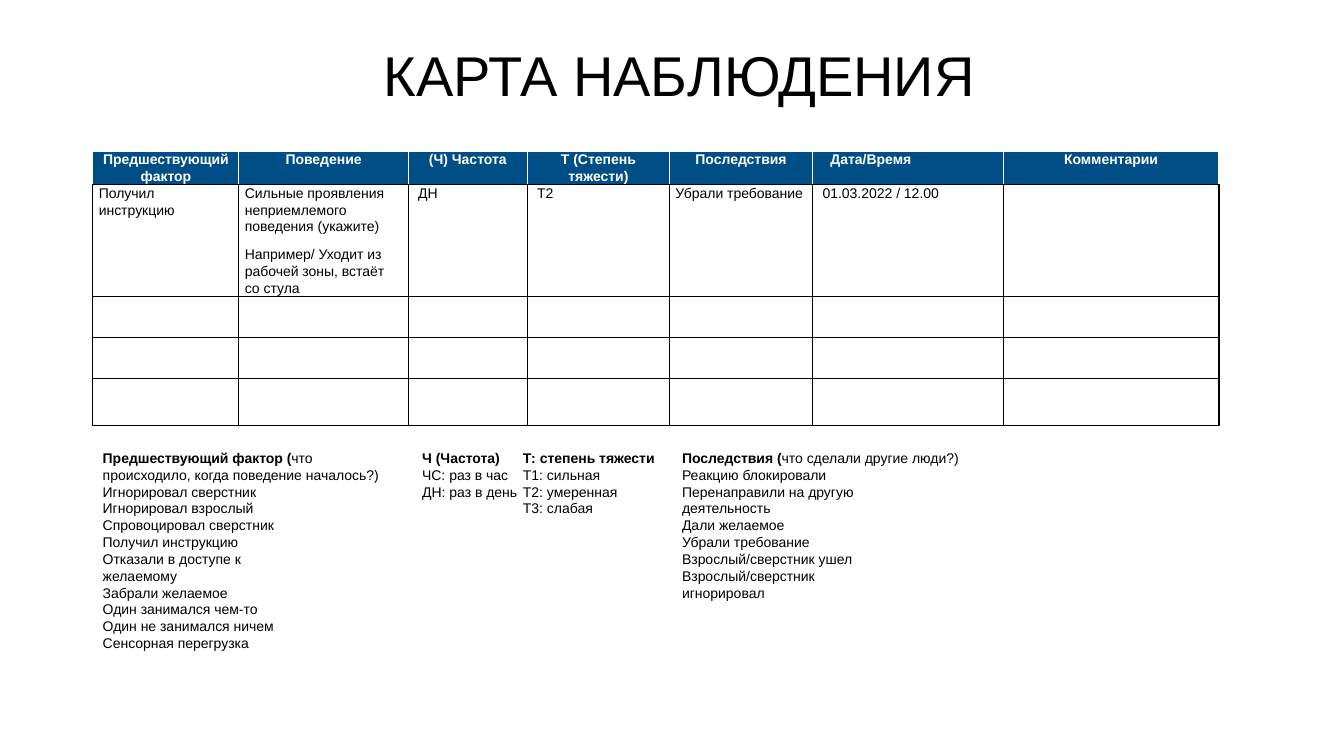
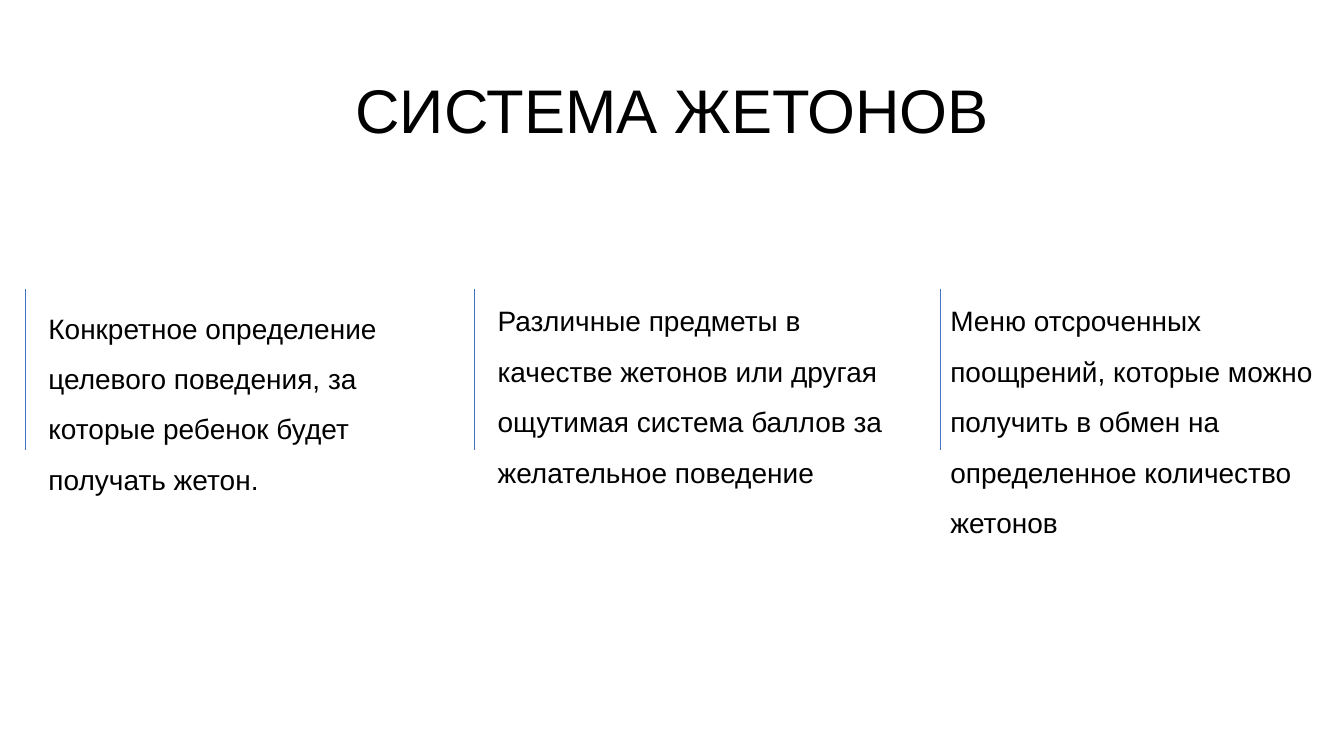
from lxml.etree import SubElement
from pptx import Presentation
from pptx.dml.color import RGBColor
from pptx.enum.shapes import MSO_CONNECTOR
from pptx.enum.text import MSO_ANCHOR, MSO_AUTO_SIZE, PP_ALIGN
from pptx.oxml.ns import qn
from pptx.util import Cm, Pt

BLACK = RGBColor(0x00, 0x00, 0x00)
WHITE = RGBColor(0xFF, 0xFF, 0xFF)
NAVY = RGBColor(0x00, 0x4E, 0x86)
BLUE = RGBColor(0x44, 0x72, 0xC4)
FONT = "Arial"
SLIDE_WIDTH, SLIDE_HEIGHT = Cm(33.87), Cm(19.05)

COLUMN_WIDTHS = [3.68, 4.27, 3, 3.58, 3.61, 4.8, 5.44]
ROW_HEIGHTS = [0.82, 2.72, 1.04, 1.04, 1.17]
CELL_MARGIN = 0.15
HEADERS = [
    "Предшествующий фактор", "Поведение", "(Ч) Частота", "Т (Степень тяжести)",
    "Последствия", "Дата/Время", "Комментарии",
]
EXAMPLE = [
    "Получил инструкцию",
    "Сильные проявления неприемлемого поведения (укажите)\n"
    "Например/ Уходит из рабочей зоны, встаёт со стула",
    "ДН", "T2", "Убрали требование", "01.03.2022 / 12.00", "",
]
DATE_COLUMN = 5
INDENTS = {(0, DATE_COLUMN): 0.3, (1, 2): 0.1, (1, 3): 0.1, (1, DATE_COLUMN): 0.1}

LEGENDS = [
    (2.34, 8.05, 5.82, "Предшествующий фактор (",
     "что происходило, когда поведение началось?)",
     ["Игнорировал сверстник", "Игнорировал взрослый", "Спровоцировал сверстник",
      "Получил инструкцию", "Отказали в доступе к", "желаемому", "Забрали желаемое",
      "Один занимался чем-то", "Один не занимался ничем", "Сенсорная перегрузка"]),
    (10.39, 6.73, 2.39, "Ч (Частота)\tТ: степень тяжести", "",
     ["ЧС: раз в час\tТ1: сильная", "ДН: раз в день\tТ2: умеренная", "\tТ3: слабая"]),
    (16.94, 8.31, 4.52, "Последствия (", "что сделали другие люди?)",
     ["Реакцию блокировали", "Перенаправили на другую", "деятельность",
      "Дали желаемое", "Убрали требование", "Взрослый/сверстник ушел",
      "Взрослый/сверстник", "игнорировал"]),
]

TOKEN_PARTS = [
    (0.64, 0.97, 7.29,
     "Конкретное определение целевого поведения, за которые ребенок будет получать жетон."),
    (11.96, 12.29, 7.11,
     "Различные предметы в качестве жетонов или другая ощутимая система баллов "
     "за желательное поведение"),
    (23.7, 23.7, 7.11,
     "Меню отсроченных поощрений, которые можно получить в обмен на определенное "
     "количество жетонов"),
]


def style_font(font, size, color=BLACK, bold=False):
    font.name = FONT
    font.size = Pt(size)
    font.color.rgb = color
    font.bold = bold


def add_titled_page(deck, text, left, top, size):
    page = deck.slides.add_slide(deck.slide_layouts[5])
    title = page.shapes.title
    title.left, title.top, title.width, title.height = left, top, Cm(29.21), Cm(3.68)
    title.text_frame.text = text
    title.text_frame.word_wrap = True
    title.text_frame.auto_size = MSO_AUTO_SIZE.NONE
    title.text_frame.vertical_anchor = MSO_ANCHOR.MIDDLE
    paragraph = title.text_frame.paragraphs[0]
    paragraph.alignment = PP_ALIGN.CENTER
    paragraph.line_spacing = 0.9
    style_font(paragraph.font, size)
    return page


def add_text_box(page, left, top, width, height):
    box = page.shapes.add_textbox(left, top, width, height)
    box.text_frame.word_wrap = True
    return box.text_frame


def set_cell_borders(cell, colors):
    properties = cell._tc.get_or_add_tcPr()
    for side, color in zip("LRTB", colors):
        line = SubElement(properties, qn(f"a:ln{side}"), w=str(Pt(1)))
        fill = SubElement(line, qn("a:solidFill"))
        SubElement(fill, qn("a:srgbClr"), val=str(color))


def fill_cell(cell, text, is_header, centered, indent):
    cell.margin_left = Cm(CELL_MARGIN + indent)
    cell.margin_right = Cm(CELL_MARGIN)
    cell.margin_top = cell.margin_bottom = 0
    if is_header:
        set_cell_borders(cell, [WHITE, WHITE, WHITE, BLACK])
        cell.fill.solid()
        cell.fill.fore_color.rgb = NAVY
    else:
        set_cell_borders(cell, [BLACK] * 4)
        cell.fill.background()
    cell.text_frame.text = text
    for paragraph in cell.text_frame.paragraphs:
        paragraph.alignment = PP_ALIGN.CENTER if centered else PP_ALIGN.LEFT
        paragraph.line_spacing = 1.07
        paragraph.space_after = Pt(8)
        style_font(paragraph.font, 10, WHITE if is_header else BLACK, is_header)


def add_observation_table(page, left, top):
    frame = page.shapes.add_table(
        len(ROW_HEIGHTS), len(COLUMN_WIDTHS), left, top,
        Cm(sum(COLUMN_WIDTHS)), Cm(sum(ROW_HEIGHTS)))
    table = frame.table
    table.horz_banding = False
    for column, width in zip(table.columns, COLUMN_WIDTHS):
        column.width = Cm(width)
    blank_rows = [[""] * len(HEADERS)] * (len(ROW_HEIGHTS) - 2)
    for row, texts in enumerate([HEADERS, EXAMPLE, *blank_rows]):
        table.rows[row].height = Cm(ROW_HEIGHTS[row])
        for column, text in enumerate(texts):
            is_header = row == 0
            fill_cell(table.cell(row, column), text, is_header,
                      is_header and column != DATE_COLUMN,
                      INDENTS.get((row, column), 0))


def add_tab_stop(paragraph, position):
    tabs = SubElement(paragraph._p.get_or_add_pPr(), qn("a:tabLst"))
    SubElement(tabs, qn("a:tab"), pos=str(position), algn="l")


def add_legend(page, left, top, width, height, term, question, entries):
    frame = add_text_box(page, left, top, width, height)
    heading = frame.paragraphs[0]
    for text, bold in ((term, True), (question, False)):
        if text:
            span = heading.add_run()
            span.text = text
            span.font.bold = bold
    for entry in entries:
        frame.add_paragraph().text = entry
    for paragraph in frame.paragraphs:
        if "\t" in paragraph.text:
            add_tab_stop(paragraph, Cm(2.54))
        style_font(paragraph.font, 10)


def add_token_part(page, rule_left, left, top, text):
    rule = page.shapes.add_connector(
        MSO_CONNECTOR.STRAIGHT, rule_left, Cm(7.29), rule_left, Cm(11.33))
    rule.line.color.rgb = BLUE
    rule.line.width = Pt(1)
    SubElement(rule._element.spPr, qn("a:effectLst"))
    width = min(Cm(10.31), SLIDE_WIDTH - left)
    frame = add_text_box(page, left, top, width, Cm(6.05))
    paragraph = frame.paragraphs[0]
    paragraph.text = text
    paragraph.line_spacing = 1.5
    style_font(paragraph.font, 20)


def build_observation_page(deck):
    page = add_titled_page(deck, "КАРТА НАБЛЮДЕНИЯ", Cm(2.51), Cm(0.13), 40)
    add_observation_table(page, Cm(2.34), Cm(3.81))
    for left, width, height, term, question, entries in LEGENDS:
        add_legend(page, Cm(left), Cm(11.2), Cm(width), Cm(height), term, question, entries)


def build_token_page(deck):
    page = add_titled_page(deck, "СИСТЕМА ЖЕТОНОВ", Cm(2.34), Cm(1.02), 44)
    for rule_left, left, top, text in TOKEN_PARTS:
        add_token_part(page, Cm(rule_left), Cm(left), Cm(top), text)


def main():
    deck = Presentation()
    deck.slide_width, deck.slide_height = SLIDE_WIDTH, SLIDE_HEIGHT
    build_observation_page(deck)
    build_token_page(deck)
    deck.save("out.pptx")


if __name__ == "__main__":
    main()
